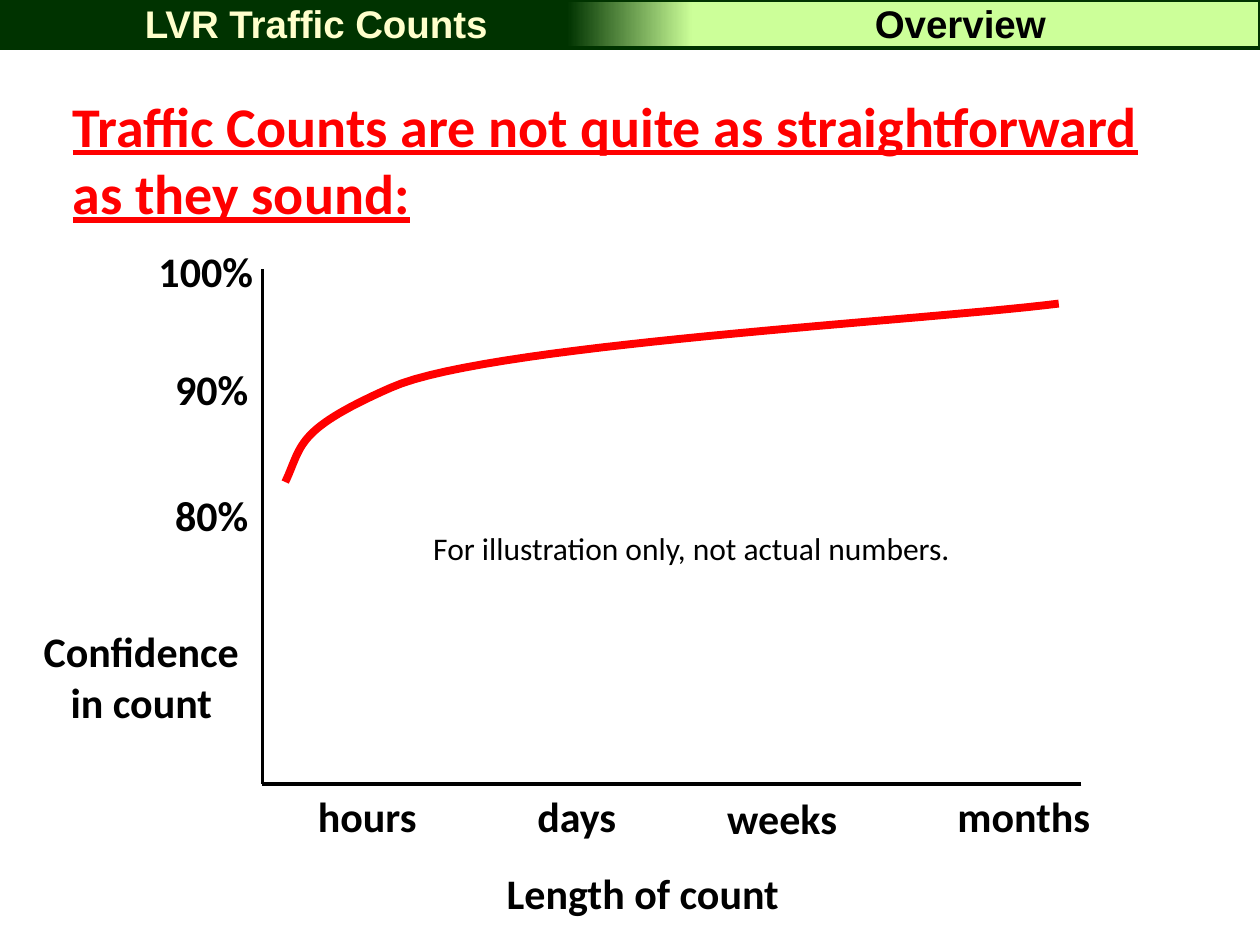
from pptx import Presentation
from pptx.dml.color import RGBColor
from pptx.enum.shapes import MSO_CONNECTOR, MSO_SHAPE
from pptx.enum.text import PP_ALIGN
from pptx.oxml.ns import qn
from pptx.util import Pt

RECTANGLE = MSO_SHAPE.RECTANGLE
STRAIGHT = MSO_CONNECTOR.STRAIGHT
LEFT, CENTER = PP_ALIGN.LEFT, PP_ALIGN.CENTER

BLACK, RED = "000000", "FF0000"
DARK_GREEN, LIGHT_GREEN, CREAM = "003300", "CCFF99", "FFFFCC"

HEADER_FORMAT = {"name": "Arial", "size": Pt(22), "bold": True}
TITLE_FORMAT = {"name": "Calibri", "size": Pt(32), "bold": True, "underline": True}
LABEL_FORMAT = {"name": "Calibri", "size": Pt(24), "bold": True}
NOTE_FORMAT = {"name": "Calibri", "size": Pt(18)}


def rgb(color):
    return RGBColor.from_string(color)


def add_text(slide, box, text, font_format, color=BLACK, align=LEFT, wrap=False):
    shape = slide.shapes.add_textbox(*(Pt(length) for length in box))
    shape.text_frame.word_wrap = wrap
    paragraph = shape.text_frame.paragraphs[0]
    paragraph.text = text
    paragraph.alignment = align
    for run in paragraph.runs:
        for attribute, value in font_format.items():
            setattr(run.font, attribute, value)
        run.font.color.rgb = rgb(color)


def set_line(shape, color, width):
    shape.line.color.rgb = rgb(color)
    shape.line.width = Pt(width)


def add_axis(slide, start, end):
    axis = slide.shapes.add_connector(
        STRAIGHT, *(Pt(length) for length in (*start, *end))
    )
    set_line(axis, BLACK, 2.25)
    properties = axis._element.spPr
    properties.append(properties.makeelement(qn("a:effectLst"), {}))


def bezier_points(start, control_1, control_2, end, steps=30):
    """Return the points after the start of a cubic curve."""
    points = []
    for step in range(1, steps + 1):
        t = step / steps
        weights = ((1 - t) ** 3, 3 * t * (1 - t) ** 2, 3 * t**2 * (1 - t), t**3)
        corners = (start, control_1, control_2, end)
        points.append(tuple(
            sum(weight * corner[axis] for weight, corner in zip(weights, corners))
            for axis in (0, 1)
        ))
    return points


def add_header(slide, left, top, width, height):
    bar = slide.shapes.add_shape(
        RECTANGLE, Pt(left), Pt(top), Pt(width), Pt(height)
    )
    bar.shadow.inherit = False
    bar.fill.gradient()
    bar.fill.gradient_angle = 0
    stops = ((0.45, DARK_GREEN), (0.55, LIGHT_GREEN))
    for stop, (position, color) in zip(bar.fill.gradient_stops, stops):
        stop.position = position
        stop.color.rgb = rgb(color)
    set_line(bar, DARK_GREEN, 2)

    headings = ((0, "LVR Traffic Counts", CREAM), (368, "Overview", BLACK))
    for offset, text, color in headings:
        box = (left + offset, top - 3.6, 361.5, 34)
        add_text(slide, box, text, HEADER_FORMAT, color, CENTER, wrap=True)


def add_confidence_curve(slide, left, top):
    start, bend, end = (13, 121.5), (73.5, 67.5), (455, 19.5)
    points = bezier_points(start, (23, 100.5), (18, 92), bend)
    points += bezier_points(bend, (128, 43), (375.5, 29.5), end)
    builder = slide.shapes.build_freeform(Pt(left + start[0]), Pt(top + start[1]))
    builder.add_line_segments(
        [(Pt(left + x), Pt(top + y)) for x, y in points], close=False
    )
    curve = builder.convert_to_shape()
    curve.shadow.inherit = False
    curve.fill.background()
    set_line(curve, RED, 4.5)


def add_confidence_graph(slide, left, top, width, height):
    """Draw the axes in the given box, with the labels around it."""
    bottom = top + height
    add_axis(slide, (left, top), (left, bottom))
    add_axis(slide, (left + width, bottom), (left, bottom))
    add_confidence_curve(slide, left, top)

    labels = (
        ("100%", -66.5, -17, 69),
        ("90%", -57, 50, 57),
        ("80%", -57, 122, 57),
        ("hours", 24.5, height, 71),
        ("days", 150, height, 60.5),
        ("weeks", 258.5, height + 1.5, 78),
        ("months", 390, height, 91.5),
        ("Length of count", 132.5, height + 44, 171.5),
    )
    for text, x, y, label_width in labels:
        add_text(slide, (left + x, top + y, label_width, 36), text, LABEL_FORMAT)
    add_text(slide, (left - 133, top + 200, 127.5, 65.5),
             "Confidence\vin count", LABEL_FORMAT, align=CENTER)
    add_text(slide, (left + 90.5, top + 145, 313, 29),
             "For illustration only, not actual numbers.", NOTE_FORMAT)


def main():
    presentation = Presentation()
    presentation.slide_width, presentation.slide_height = Pt(720), Pt(540)
    slide = presentation.slides.add_slide(presentation.slide_layouts[6])
    add_text(slide, (34.5, 48.5, 654, 86),
             "Traffic Counts are not quite as straightforward as they sound:",
             TITLE_FORMAT, RED, wrap=True)
    add_header(slide, 0, 0, 720, 27.5)
    add_confidence_graph(slide, 150, 154, 468, 294)
    presentation.save("out.pptx")


if __name__ == "__main__":
    main()
